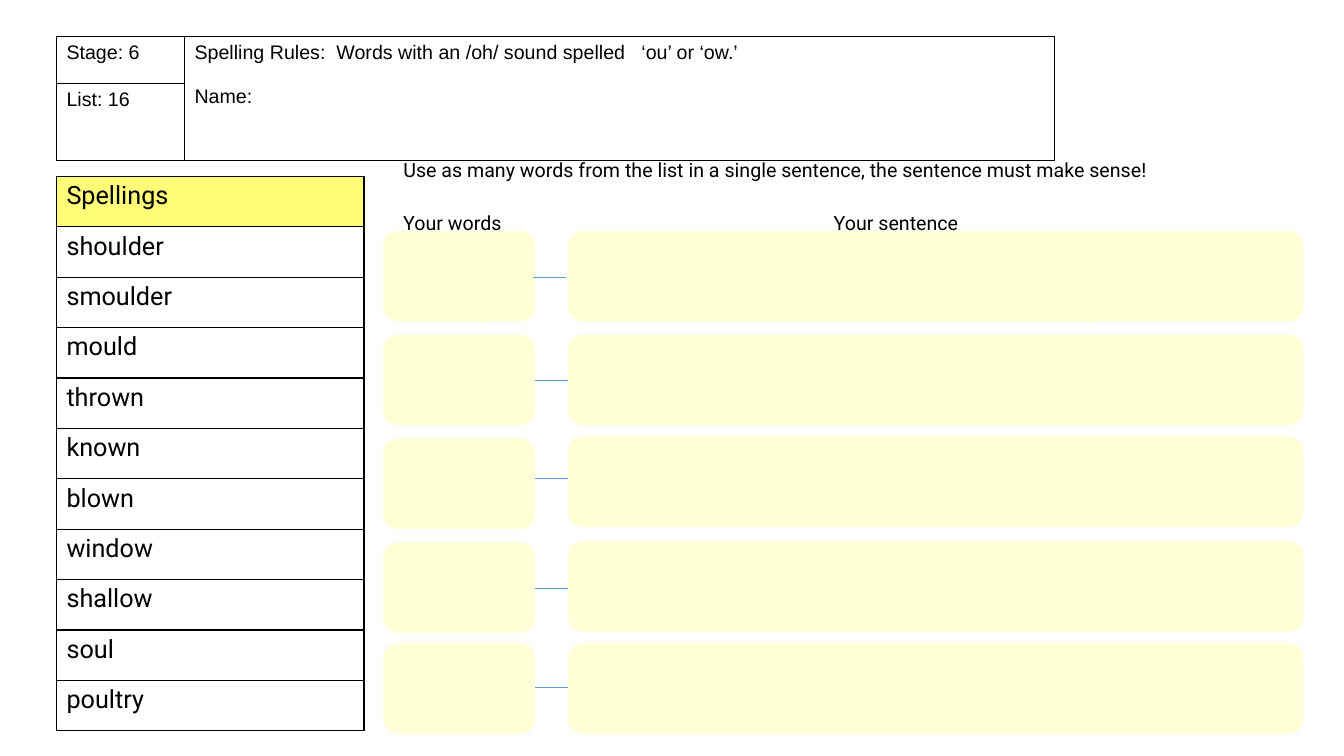
from lxml import etree
from pptx import Presentation
from pptx.dml.color import RGBColor
from pptx.enum.shapes import MSO_CONNECTOR, MSO_SHAPE
from pptx.enum.text import MSO_ANCHOR, MSO_AUTO_SIZE, PP_ALIGN
from pptx.oxml.ns import qn
from pptx.util import Inches, Pt

ROUNDED = MSO_SHAPE.ROUNDED_RECTANGLE
STRAIGHT = MSO_CONNECTOR.STRAIGHT
TOP = MSO_ANCHOR.TOP
LEFT = PP_ALIGN.LEFT
NO_AUTOFIT = MSO_AUTO_SIZE.NONE
TITLE_ONLY = 5

BLACK, YELLOW, BLUE = "000000", "FFFD78", "5B9BD5"
SPELLINGS = ["Spellings", "shoulder", "smoulder", "mould", "thrown", "known",
             "blown", "window", "shallow", "soul", "poultry"]
RULE = "Spelling Rules:  Words with an /oh/ sound spelled   ‘ou’ or ‘ow.’"
INSTRUCTION = ("Use as many words from the list in a single sentence, "
               "the sentence must make sense!")
# Top of the words box, top of the sentence box, left and height of the link
ANSWER_ROWS = [(2.29, 2.29, 5.29, 2.75), (3.32, 3.32, 5.31, 3.77),
               (4.35, 4.33, 5.31, 4.75), (5.38, 5.37, 5.31, 5.84),
               (6.38, 6.38, 5.31, 6.82)]


def color(value):
    return RGBColor.from_string(value)


class Worksheet:
    """Holds the text style and the page that is being filled."""

    def __init__(self, page, font="Roboto", size=14):
        self.page = page
        self.font = font
        self.size = size

    def set_text(self, frame, lines, font=None, size=None, gap=0):
        """Fill a text frame, with a gap in points before each later line."""
        frame.text = "\n".join(lines)
        for index, paragraph in enumerate(frame.paragraphs):
            paragraph.alignment = LEFT
            if index:
                paragraph.space_before = Pt(gap)
            paragraph.font.name = font or self.font
            paragraph.font.size = Pt(size or self.size)
            paragraph.font.color.rgb = color(BLACK)

    def title(self, text, left, top, width, height):
        title = self.page.shapes.title
        title.left, title.top = Inches(left), Inches(top)
        title.width, title.height = Inches(width), Inches(height)
        frame = title.text_frame
        frame.auto_size = NO_AUTOFIT
        frame.word_wrap = True
        frame.vertical_anchor = TOP
        self.set_text(frame, [text])

    def label(self, text, left, top, width, height):
        box = self.page.shapes.add_textbox(
            Inches(left), Inches(top), Inches(width), Inches(height))
        box.text_frame.word_wrap = False
        self.set_text(box.text_frame, [text])

    def table(self, left, top, widths, heights):
        """Add a plain table with thin black borders round every cell."""
        table = self.page.shapes.add_table(
            len(heights), len(widths), Inches(left), Inches(top),
            Inches(sum(widths)), Inches(sum(heights))).table
        table.first_row = table.horz_banding = False
        for column, width in zip(table.columns, widths):
            column.width = Inches(width)
        for row, height in zip(table.rows, heights):
            row.height = Inches(height)
        for cell in table.iter_cells():
            self.outline(cell)
            cell.fill.background()
        return table

    def outline(self, cell):
        properties = cell._tc.get_or_add_tcPr()
        for side in ("a:lnL", "a:lnR", "a:lnT", "a:lnB"):
            border = etree.SubElement(properties, qn(side), w=str(Pt(1)))
            fill = etree.SubElement(border, qn("a:solidFill"))
            etree.SubElement(fill, qn("a:srgbClr"), val=BLACK)

    def answer_box(self, left, top, width, height=0.9):
        box = self.page.shapes.add_shape(
            ROUNDED, Inches(left), Inches(top), Inches(width), Inches(height))
        box.shadow.inherit = False
        box.line.fill.background()
        box.fill.solid()
        box.fill.fore_color.rgb = color(YELLOW)
        tint = box._element.spPr.find(qn("a:solidFill"))[0]
        etree.SubElement(tint, qn("a:alpha"), val="30000")

    def link(self, left, top, width=0.32):
        line = self.page.shapes.add_connector(
            STRAIGHT, Inches(left), Inches(top), Inches(left + width), Inches(top))
        line.line.color.rgb = color(BLUE)
        line.line.width = Pt(0.5)
        etree.SubElement(line._element.spPr, qn("a:effectLst"))


def main():
    deck = Presentation()
    deck.slide_width, deck.slide_height = Inches(13.33), Inches(7.5)
    sheet = Worksheet(deck.slides.add_slide(deck.slide_layouts[TITLE_ONLY]))

    spellings = sheet.table(0.56, 1.75, [3.05], [0.5] * len(SPELLINGS))
    for cell, word in zip(spellings.iter_cells(), SPELLINGS):
        sheet.set_text(cell.text_frame, [word], size=18)
    heading = spellings.cell(0, 0)
    heading.fill.solid()
    heading.fill.fore_color.rgb = color(YELLOW)

    header = sheet.table(0.56, 0.36, [1.27, 8.63], [0.47, 0.76])
    header.cell(0, 1).merge(header.cell(1, 1))
    for row, column, lines in [(0, 0, ["Stage: 6"]), (1, 0, ["List: 16"]),
                               (0, 1, [RULE, "Name:"])]:
        sheet.set_text(header.cell(row, column).text_frame, lines, font="Arial", gap=16)

    for words_top, sentence_top, link_left, link_top in ANSWER_ROWS:
        sheet.answer_box(3.8, words_top, 1.51)
        sheet.answer_box(5.63, sentence_top, 7.3)
        sheet.link(link_left, link_top)

    sheet.label("Your words", 3.9, 2.04, 1.38, 0.34)
    sheet.label("Your sentence", 8.17, 2.04, 1.69, 0.34)
    sheet.title(INSTRUCTION, 3.9, 1.52, 9.03, 0.57)
    deck.save("out.pptx")


if __name__ == "__main__":
    main()
